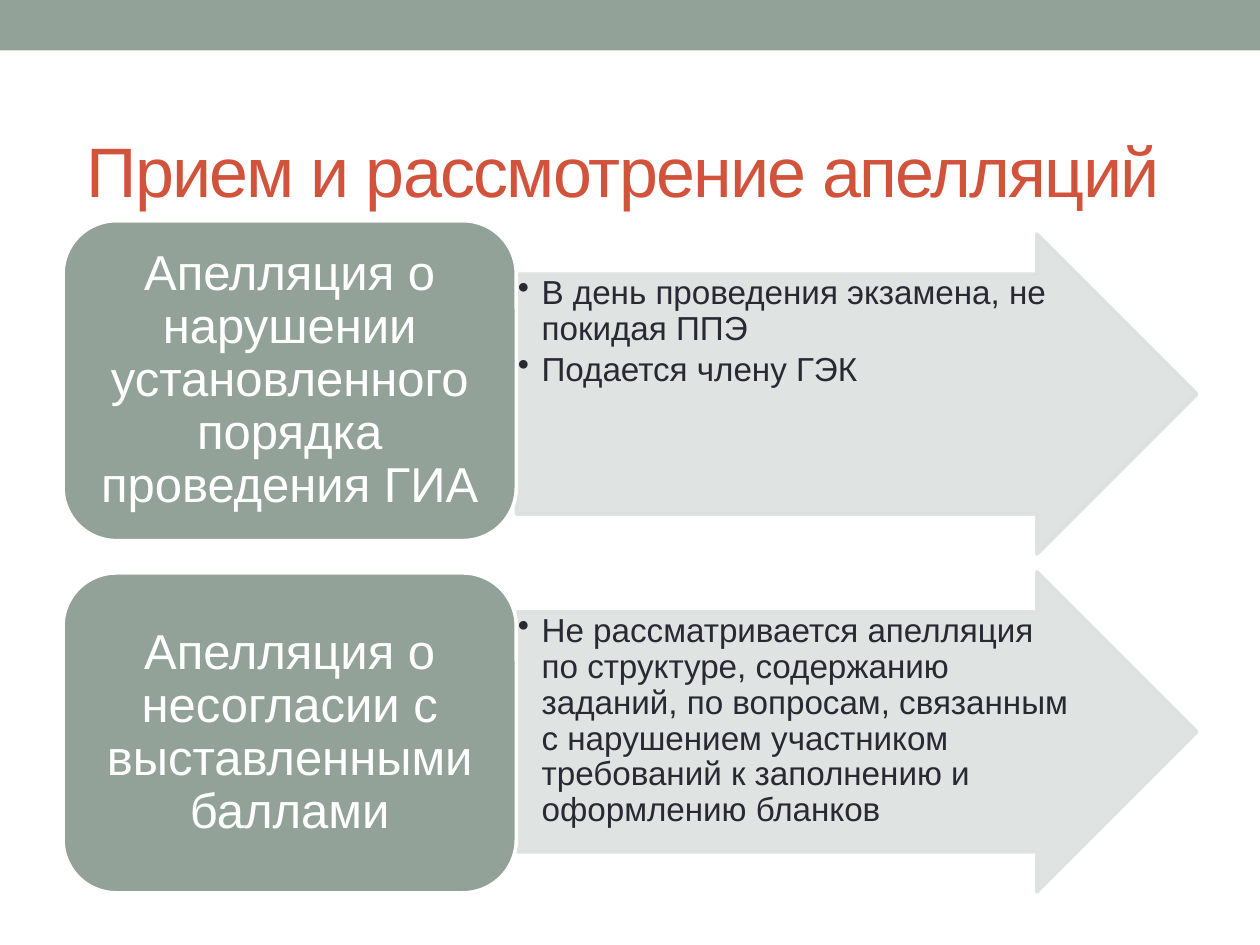
import pptx
import pptx.dml.color
import pptx.enum.shapes
import pptx.enum.text
import pptx.oxml
import pptx.oxml.ns
import pptx.util
from pptx.util import Cm

RGBColor = pptx.dml.color.RGBColor
Pt = pptx.util.Pt
SHAPES = pptx.enum.shapes.MSO_SHAPE
ALIGN = pptx.enum.text.PP_ALIGN
ANCHOR = pptx.enum.text.MSO_ANCHOR

SAGE = RGBColor(0x93, 0xA2, 0x99)
PALE_SAGE = RGBColor(0xDC, 0xE0, 0xDE)
RUST = RGBColor(0xD2, 0x53, 0x3C)
INK = RGBColor(0x29, 0x29, 0x34)
WHITE = RGBColor(0xFF, 0xFF, 0xFF)

OUTLINE = Pt(2.08)
ARROW_OPACITY = 90
BULLET_INDENT = Cm(0.48)

TITLE_FORMAT = {
    "frame": {"vertical_anchor": ANCHOR.MIDDLE},
    "paragraph": {"alignment": ALIGN.LEFT},
    "font": {"name": "Arial", "size": Pt(40)},
    "color": RUST,
}
CARD_FORMAT = {
    "frame": {"vertical_anchor": ANCHOR.MIDDLE,
              "margin_left": Cm(0.3), "margin_right": Cm(0.3),
              "margin_top": Cm(0.15), "margin_bottom": Cm(0.15)},
    "paragraph": {"alignment": ALIGN.CENTER, "line_spacing": 0.9},
    "font": {"name": "Arial", "size": Pt(28)},
    "color": WHITE,
}
DETAIL_FORMAT = {
    "frame": {"vertical_anchor": ANCHOR.TOP,
              "margin_left": Cm(0.03), "margin_right": Cm(0.03),
              "margin_top": Cm(0.03), "margin_bottom": Cm(0.03)},
    "paragraph": {"alignment": ALIGN.LEFT, "line_spacing": 0.9,
                  "space_after": Pt(2.85)},
    "font": {"name": "Arial", "size": Pt(19)},
    "color": INK,
}

# Card top, arrow top, card text, arrow details
APPEALS = [
    (Cm(4.45), Cm(4.72),
     "Апелляция о нарушении установленного порядка проведения ГИА",
     ["В день проведения экзамена, не покидая ППЭ", "Подается члену ГЭК"]),
    (Cm(11.55), Cm(11.53),
     "Апелляция о несогласии с выставленными баллами",
     ["Не рассматривается апелляция по структуре, содержанию заданий, "
      "по вопросам, связанным с нарушением участником требований "
      "к заполнению и оформлению бланков"]),
]


def apply_values(target, values):
    for name, value in values.items():
        setattr(target, name, value)


def set_opacity(fill_parent, percent):
    """Make the solid fill found under an XML element partly transparent."""
    color = fill_parent.find(pptx.oxml.ns.qn("a:solidFill"))[0]
    alpha = pptx.oxml.parse_xml(
        f'<a:alpha {pptx.oxml.ns.nsdecls("a")} val="{percent * 1000}"/>')
    color.append(alpha)


def add_bullet(paragraph):
    properties = paragraph._p.get_or_add_pPr()
    properties.set("marL", str(BULLET_INDENT))
    properties.set("indent", str(-BULLET_INDENT))
    properties.append(pptx.oxml.parse_xml(
        f'<a:buChar {pptx.oxml.ns.nsdecls("a")} char="•"/>'))


def add_panel(slide, kind, box, fill, line=None):
    shape = slide.shapes.add_shape(kind, *box)
    shape.shadow.inherit = False
    shape.fill.solid()
    shape.fill.fore_color.rgb = fill
    if line is None:
        shape.line.fill.background()
    else:
        shape.line.color.rgb = line
        shape.line.width = OUTLINE
    return shape


def add_text(slide, box, lines, style, bulleted=False):
    frame = slide.shapes.add_textbox(*box).text_frame
    frame.word_wrap = True
    apply_values(frame, style["frame"])
    for index, line in enumerate(lines):
        paragraph = frame.add_paragraph() if index else frame.paragraphs[0]
        apply_values(paragraph, style["paragraph"])
        if bulleted:
            add_bullet(paragraph)
        run = paragraph.add_run()
        run.text = line
        apply_values(run.font, style["font"])
        run.font.color.rgb = style["color"]
    return frame


def add_title(slide, text):
    box = (Cm(1.5), Cm(1.93), Cm(22.86), Cm(2.97))
    frame = add_text(slide, box, [text], TITLE_FORMAT)
    run = frame.paragraphs[0].runs[0]
    run._r.get_or_add_rPr().set("spc", "-100")


def add_arrow(slide, top, details):
    left = Cm(10.41)
    arrow = add_panel(slide, SHAPES.RIGHT_ARROW,
                      (left, top, Cm(13.72), Cm(6.45)), PALE_SAGE, PALE_SAGE)
    arrow.adjustments[0] = 0.75
    arrow.adjustments[1] = 0.5
    properties = arrow._element.spPr
    for fill_parent in (properties, properties.find(pptx.oxml.ns.qn("a:ln"))):
        set_opacity(fill_parent, ARROW_OPACITY)
    add_text(slide, (left, top + Cm(0.81), Cm(11.3), Cm(4.83)),
             details, DETAIL_FORMAT, bulleted=True)


def add_card(slide, top, text):
    left = Cm(1.27)
    inset = Cm(0.31)
    add_panel(slide, SHAPES.ROUNDED_RECTANGLE,
              (left, top, Cm(9.14), Cm(6.45)), SAGE, WHITE)
    add_text(slide, (left + inset, top + inset, Cm(8.52), Cm(5.83)),
             [text], CARD_FORMAT)


def main():
    presentation = pptx.Presentation()
    presentation.slide_width = Cm(25.4)
    presentation.slide_height = Cm(19.05)
    slide = presentation.slides.add_slide(presentation.slide_layouts[6])
    add_panel(slide, SHAPES.RECTANGLE,
              (0, 0, presentation.slide_width, Cm(1.02)), SAGE)
    add_title(slide, "Прием и рассмотрение апелляций")
    for card_top, arrow_top, heading, details in APPEALS:
        add_arrow(slide, arrow_top, details)
        add_card(slide, card_top, heading)
    presentation.save("out.pptx")


if __name__ == "__main__":
    main()
